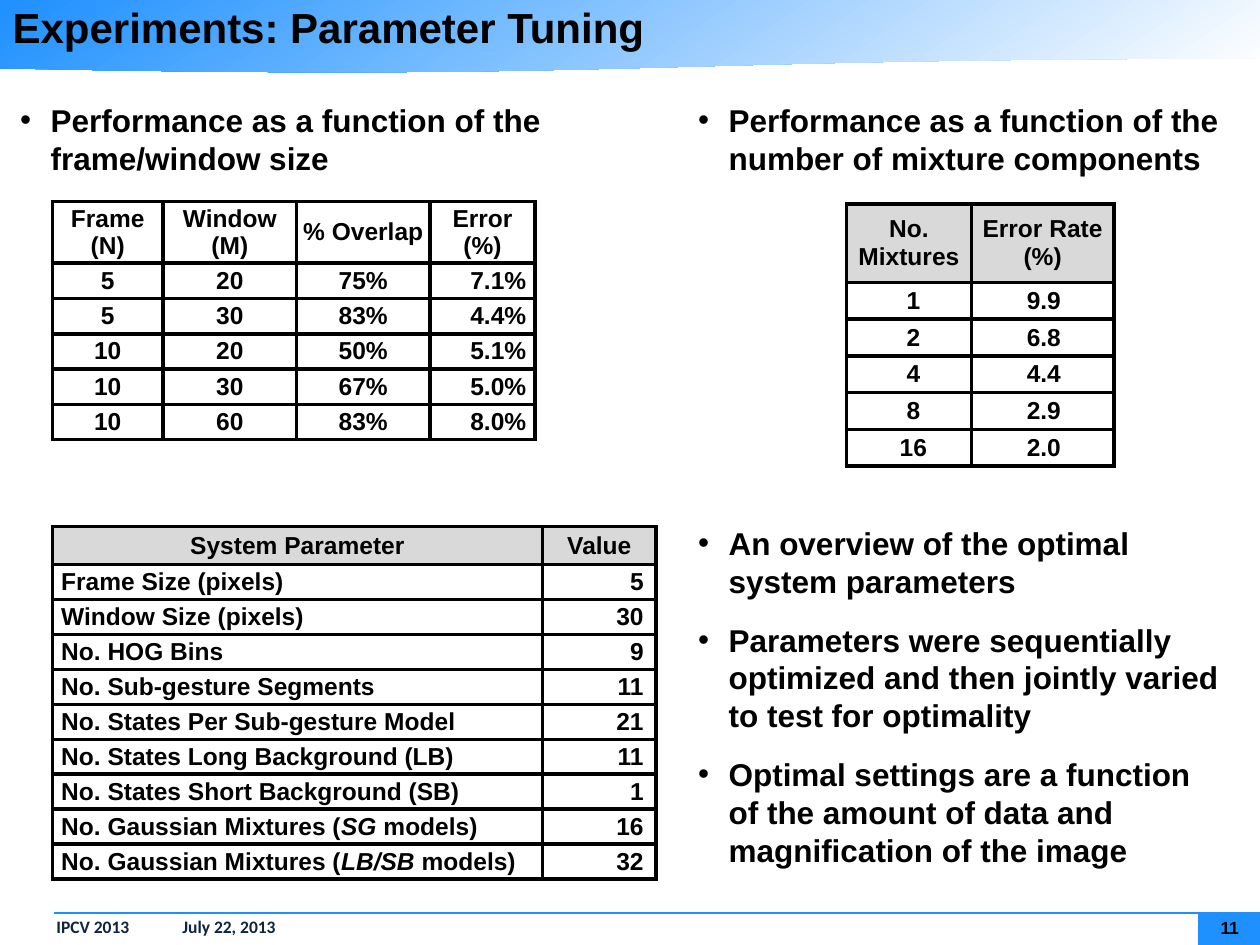
from dataclasses import dataclass

from lxml.etree import SubElement
from pptx import Presentation
from pptx.dml.color import RGBColor as RGB
from pptx.enum.shapes import MSO_CONNECTOR as CONNECTOR, MSO_SHAPE as SHAPE
from pptx.enum.text import MSO_ANCHOR as ANCHOR, MSO_AUTO_SIZE as AUTO_SIZE, PP_ALIGN as ALIGN
from pptx.oxml.ns import qn
from pptx.util import Pt


@dataclass(frozen=True)
class Theme:
    font: str = "Arial"
    footer_font: str = "Calibri"
    ink: RGB = RGB(0, 0, 0)
    footer_ink: RGB = RGB(0x0F, 0x24, 0x3E)
    accent: RGB = RGB(0x1E, 0x90, 0xFF)
    paper: RGB = RGB(0xFF, 0xFF, 0xFF)
    header: RGB = RGB(0xD9, 0xD9, 0xD9)
    title_size: int = 24
    bullet_size: int = 18
    cell_size: int = 14
    footer_size: int = 10


@dataclass(frozen=True)
class Column:
    width: float
    align: ALIGN = ALIGN.CENTER
    left: float = 5
    right: float = 5


class SlideBuilder:
    def __init__(self, slide, theme):
        self.slide = slide
        self.shapes = slide.shapes
        self.theme = theme

    def style_runs(self, paragraph, size, font=None, color=None):
        for run in paragraph.runs:
            run.font.size = Pt(size)
            run.font.name = font or self.theme.font
            run.font.color.rgb = color or self.theme.ink
            run.font.bold = True

    def set_margins(self, target, left=0, top=0, right=0, bottom=0):
        target.margin_left, target.margin_top = Pt(left), Pt(top)
        target.margin_right, target.margin_bottom = Pt(right), Pt(bottom)

    def block(self, kind, left, top, width, height):
        block = self.shapes.add_shape(kind, Pt(left), Pt(top), Pt(width), Pt(height))
        block.shadow.inherit = False
        block.line.fill.background()
        return block

    def banner(self, width, height):
        fill = self.block(SHAPE.FLOWCHART_DOCUMENT, 0, 0, width, height).fill
        fill.gradient()
        fill.gradient_angle = 305
        for stop, color in zip(fill.gradient_stops, (self.theme.accent, self.theme.paper)):
            stop.color.rgb = color

    def panel(self, left, top, width, height):
        fill = self.block(SHAPE.RECTANGLE, left, top, width, height).fill
        fill.solid()
        fill.fore_color.rgb = self.theme.accent

    def rule(self, left, right, y):
        rule = self.shapes.add_connector(CONNECTOR.STRAIGHT, Pt(left), Pt(y), Pt(right), Pt(y))
        rule.line.color.rgb = self.theme.accent
        rule.line.width = Pt(1.5)
        SubElement(rule._element.spPr, qn("a:effectLst"))

    def text_frame(self, left, top, width, height):
        frame = self.shapes.add_textbox(Pt(left), Pt(top), Pt(width), Pt(height)).text_frame
        frame.word_wrap = True
        return frame

    def footer(self, text, left, top, width, height, indent, tab):
        frame = self.text_frame(left, top, width, height)
        frame.text = text
        paragraph = frame.paragraphs[0]
        paragraph.line_spacing = 0.95
        properties = paragraph._p.get_or_add_pPr()
        properties.set("marL", str(Pt(indent)))
        properties.set("indent", "0")
        tabs = SubElement(properties, qn("a:tabLst"))
        SubElement(tabs, qn("a:tab"), pos=str(Pt(tab)), algn="r")
        self.style_runs(paragraph, self.theme.footer_size,
                        self.theme.footer_font, self.theme.footer_ink)

    def page_number(self, text, left, top, width, height):
        frame = self.text_frame(left, top, width, height)
        self.set_margins(frame)
        frame.vertical_anchor = ANCHOR.MIDDLE
        frame.text = text
        frame.paragraphs[0].alignment = ALIGN.CENTER
        self.style_runs(frame.paragraphs[0], self.theme.footer_size)

    def title(self, text, left, top, width, height):
        title = self.shapes.title
        title.left, title.top = Pt(left), Pt(top)
        title.width, title.height = Pt(width), Pt(height)
        frame = title.text_frame
        frame.text = text
        frame.auto_size = AUTO_SIZE.NONE
        frame.vertical_anchor = ANCHOR.MIDDLE
        frame.paragraphs[0].alignment = ALIGN.LEFT
        self.style_runs(frame.paragraphs[0], self.theme.title_size)
        self.shapes._spTree.append(title._element)

    def bullets(self, items, left, top, width, height):
        frame = self.text_frame(left, top, width, height)
        self.set_margins(frame)
        frame.text = "\n".join(items)
        for paragraph in frame.paragraphs:
            paragraph.space_after = Pt(12)
            properties = paragraph._p.get_or_add_pPr()
            properties.set("marL", str(Pt(17.5)))
            properties.set("indent", str(-Pt(17.5)))
            SubElement(properties, qn("a:buFont"), typeface=self.theme.font)
            SubElement(properties, qn("a:buChar"), char="•")
            self.style_runs(paragraph, self.theme.bullet_size)

    def cell(self, cell, text, fill, align):
        paragraph = cell.text_frame.paragraphs[0]
        for position, part in enumerate(text.split("*")):
            run = paragraph.add_run()
            run.text = part
            run.font.italic = position % 2 == 1
        paragraph.alignment = align
        self.style_runs(paragraph, self.theme.cell_size)
        cell.vertical_anchor = ANCHOR.MIDDLE
        properties = cell._tc.get_or_add_tcPr()
        for side in "LRTB":
            border = SubElement(properties, qn(f"a:ln{side}"), w=str(Pt(2.25)))
            solid = SubElement(border, qn("a:solidFill"))
            SubElement(solid, qn("a:srgbClr"), val=str(self.theme.ink))
        cell.fill.solid()
        cell.fill.fore_color.rgb = fill

    def table(self, rows, columns, left, top, header_height, row_height,
              header_fill, header_inset=5):
        heights = [header_height] + [row_height] * (len(rows) - 1)
        width = sum(column.width for column in columns)
        table = self.shapes.add_table(len(rows), len(columns), Pt(left), Pt(top),
                                      Pt(width), Pt(sum(heights))).table
        table.first_row = table.horz_banding = False
        for index, column in enumerate(columns):
            table.columns[index].width = Pt(column.width)
        for r, (values, height) in enumerate(zip(rows, heights)):
            table.rows[r].height = Pt(height)
            for c, (value, column) in enumerate(zip(values, columns)):
                cell = table.cell(r, c)
                if r == 0:
                    self.set_margins(cell, header_inset, 0, header_inset)
                    self.cell(cell, value, header_fill, ALIGN.CENTER)
                else:
                    self.set_margins(cell, column.left, 0, column.right)
                    self.cell(cell, value, self.theme.paper, column.align)


def main():
    deck = Presentation()
    deck.slide_width, deck.slide_height = Pt(720), Pt(540)
    theme = Theme()
    page = SlideBuilder(deck.slides.add_slide(deck.slide_layouts[5]), theme)

    page.banner(720, 41.8)
    page.panel(684.7, 521.3, 35.3, 18.7)
    page.footer("IPCV 2013\tJuly 22, 2013", 2.9, 520.6, 717.1, 18.7, 22.3, 670.3)
    page.rule(30.6, 720, 521.7)
    page.page_number("11", 688.3, 524.2, 28.8, 12.2)
    page.title("Experiments: Parameter Tuning", 0, 0, 720, 31)

    left_edge, right_edge, text_width = 11.5, 398.9, 302.4
    page.bullets(["Performance as a function of the frame/window size"],
                 left_edge, 57.6, text_width, 44)
    window_results = [
        ("Frame (N)", "Window (M)", "% Overlap", "Error (%)"),
        ("5", "20", "75%", "7.1%"),
        ("5", "30", "83%", "4.4%"),
        ("10", "20", "50%", "5.1%"),
        ("10", "30", "67%", "5.0%"),
        ("10", "60", "83%", "8.0%"),
    ]
    page.table(window_results,
               [Column(63.2), Column(76.3), Column(76.3), Column(60, ALIGN.RIGHT)],
               30, 115.2, 35.2, 20.2, theme.paper, header_inset=1.4)

    system_parameters = [
        ("System Parameter", "Value"),
        ("Frame Size (pixels)", "5"),
        ("Window Size (pixels)", "30"),
        ("No. HOG Bins", "9"),
        ("No. Sub-gesture Segments", "11"),
        ("No. States Per Sub-gesture Model", "21"),
        ("No. States Long Background (LB)", "11"),
        ("No. States Short Background (SB)", "1"),
        ("No. Gaussian Mixtures (*SG* models)", "16"),
        ("No. Gaussian Mixtures (*LB/SB* models)", "32"),
    ]
    page.table(system_parameters,
               [Column(280, ALIGN.JUSTIFY), Column(65, ALIGN.RIGHT, 1.4, 7.2)],
               30, 301, 21.5, 20, theme.header)

    mixture_results = [
        ("No. Mixtures", "Error Rate (%)"),
        ("1", "9.9"),
        ("2", "6.8"),
        ("4", "4.4"),
        ("8", "2.9"),
        ("16", "2.0"),
    ]
    page.table(mixture_results,
               [Column(71.3, left=5, right=0), Column(81.4, left=1.4, right=0)],
               483.8, 116.6, 44.8, 21, theme.header)

    page.bullets(["Performance as a function of the number of mixture components"],
                 right_edge, 57.6, text_width, 44)
    page.bullets(["An overview of the optimal system parameters",
                  "Parameters were sequentially optimized and then jointly varied "
                  "to test for optimality",
                  "Optimal settings are a function of the amount of data and "
                  "magnification of the image"],
                 right_edge, 299.5, text_width, 198.7)

    deck.save("out.pptx")


if __name__ == "__main__":
    main()
